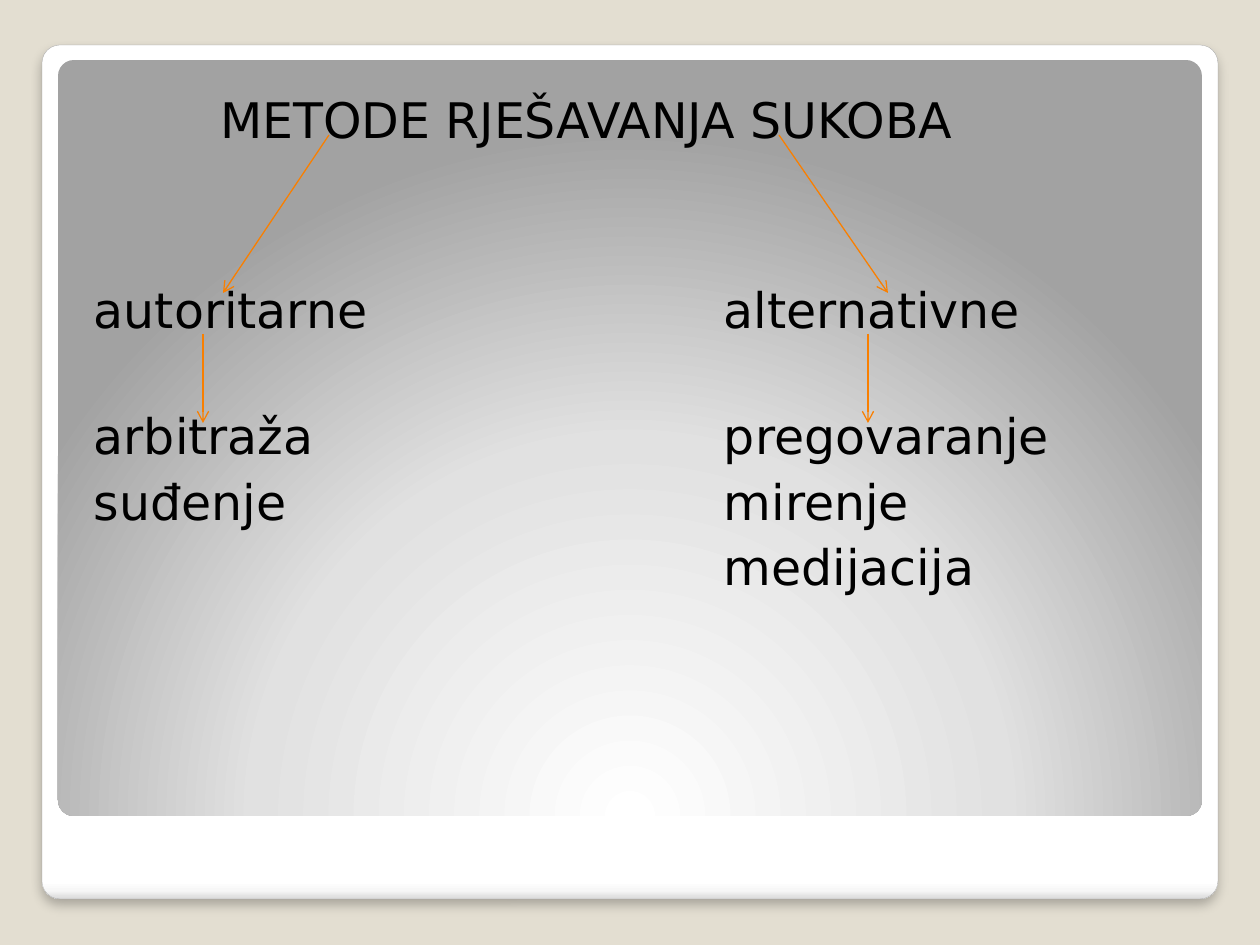
from pptx import Presentation
from pptx.dml.color import RGBColor
from pptx.enum.shapes import MSO_CONNECTOR, MSO_SHAPE
from pptx.enum.text import MSO_ANCHOR, PP_ALIGN
from pptx.oxml import parse_xml
from pptx.oxml.ns import nsdecls
from pptx.util import Emu, Pt

EMU_PER_PX = 914400 // 126
ROUNDED = MSO_SHAPE.ROUNDED_RECTANGLE
STRAIGHT = MSO_CONNECTOR.STRAIGHT
TOP = MSO_ANCHOR.TOP
LEFT = PP_ALIGN.LEFT

COLORS = {
    "background": "E3DED1",
    "border": "A4A4A4",
    "text": "000000",
    "arrow": "F97F00",
}
CARD_STOPS = [(0, "FFFFFF"), (98, "FFFFFF"), (99, "F7F7F7"), (100, "DADADA")]
PANEL_STOPS = [(0, "FFFFFF"), (55, "E1E1E1"), (100, "A2A2A2")]
DOWNWARD = '<a:lin ang="5400000" scaled="0"/>'
FROM_BOTTOM = ('<a:path path="circle"><a:fillToRect l="50000" t="175000" '
               'r="50000" b="-75000"/></a:path>')
CARD_SHADOW = ('<a:outerShdw blurRad="76200" dist="50800" dir="5400000" algn="tl" '
               'rotWithShape="0"><a:srgbClr val="000000"><a:alpha val="25000"/>'
               '</a:srgbClr></a:outerShdw>')


def px(length):
    return Emu(length * EMU_PER_PX)


def rgb(name):
    return RGBColor.from_string(COLORS[name])


def drawing_xml(tag, content="", attributes=""):
    return parse_xml(f'<a:{tag} {nsdecls("a")} {attributes}>{content}</a:{tag}>')


class SlideBuilder:
    font = "DejaVu Sans"
    font_size = Pt(28)
    paragraph_gap = Pt(3.6)
    line_width = Pt(0.75)
    corner = 0.021

    def __init__(self, slide):
        self.slide = slide
        slide.background.fill.solid()
        slide.background.fill.fore_color.rgb = rgb("background")

    def panel(self, left, top, width, height, stops, direction, border=None, shadow=""):
        """Add a rounded panel with a gradient fill."""
        shape = self.slide.shapes.add_shape(
            ROUNDED, px(left), px(top), px(width), px(height))
        shape.adjustments[0] = self.corner
        if border:
            shape.line.color.rgb = rgb(border)
            shape.line.width = Pt(0.16)
        else:
            shape.line.fill.background()
        colors = "".join(
            f'<a:gs pos="{position * 1000}"><a:srgbClr val="{color}"/></a:gs>'
            for position, color in stops)
        properties = shape._element.spPr
        properties.insert(2, drawing_xml(
            "gradFill", f"<a:gsLst>{colors}</a:gsLst>{direction}", 'rotWithShape="1"'))
        properties.append(drawing_xml("effectLst", shadow))

    def title(self, left, top, width, height, text):
        shape = self.slide.shapes.title
        shape.left, shape.top = px(left), px(top)
        shape.width, shape.height = px(width), px(height)
        self.slide.shapes._spTree.append(shape._element)  # in front of the panels
        self.fill_text(shape.text_frame, [text])

    def text(self, left, top, width, height, lines):
        shape = self.slide.shapes.add_textbox(px(left), px(top), px(width), px(height))
        self.fill_text(shape.text_frame, lines)

    def fill_text(self, frame, lines):
        frame.word_wrap = True
        frame.vertical_anchor = TOP
        frame.margin_left = frame.margin_right = 0
        frame.margin_top = frame.margin_bottom = 0
        for index, line in enumerate(lines):
            paragraph = frame.add_paragraph() if index else frame.paragraphs[0]
            paragraph.alignment = LEFT
            paragraph.space_before = self.paragraph_gap if index else Pt(0)
            run = paragraph.add_run()
            run.text = line
            run.font.name = self.font
            run.font.size = self.font_size
            run.font.color.rgb = rgb("text")

    def arrow(self, start, end):
        connector = self.slide.shapes.add_connector(
            STRAIGHT, *(px(length) for length in (*start, *end)))
        connector.line.color.rgb = rgb("arrow")
        connector.line.width = self.line_width
        connector.line._get_or_add_ln().append(
            drawing_xml("tailEnd", attributes='type="arrow"'))
        connector._element.spPr.append(drawing_xml("effectLst"))


def main():
    presentation = Presentation()
    presentation.slide_width = px(1260)
    presentation.slide_height = px(945)
    builder = SlideBuilder(presentation.slides.add_slide(presentation.slide_layouts[5]))

    builder.panel(42, 45, 1176, 854, CARD_STOPS, DOWNWARD, "border", CARD_SHADOW)
    builder.panel(58, 60, 1144, 756, PANEL_STOPS, FROM_BOTTOM)
    builder.title(220, 90, 900, 58, "METODE RJEŠAVANJA SUKOBA")

    columns = [
        (94, "autoritarne", ["arbitraža", "suđenje"]),
        (724, "alternativne", ["pregovaranje", "mirenje", "medijacija"]),
    ]
    for left, heading, methods in columns:
        builder.text(left, 280, 440, 58, [heading])
        builder.text(left, 406, 440, 63 * len(methods), methods)

    for start_x, end_x, method_x in [(329, 223, 203), (779, 888, 868)]:
        builder.arrow((start_x, 135), (end_x, 293))
        builder.arrow((method_x, 334), (method_x, 423))

    presentation.save("out.pptx")


if __name__ == "__main__":
    main()
